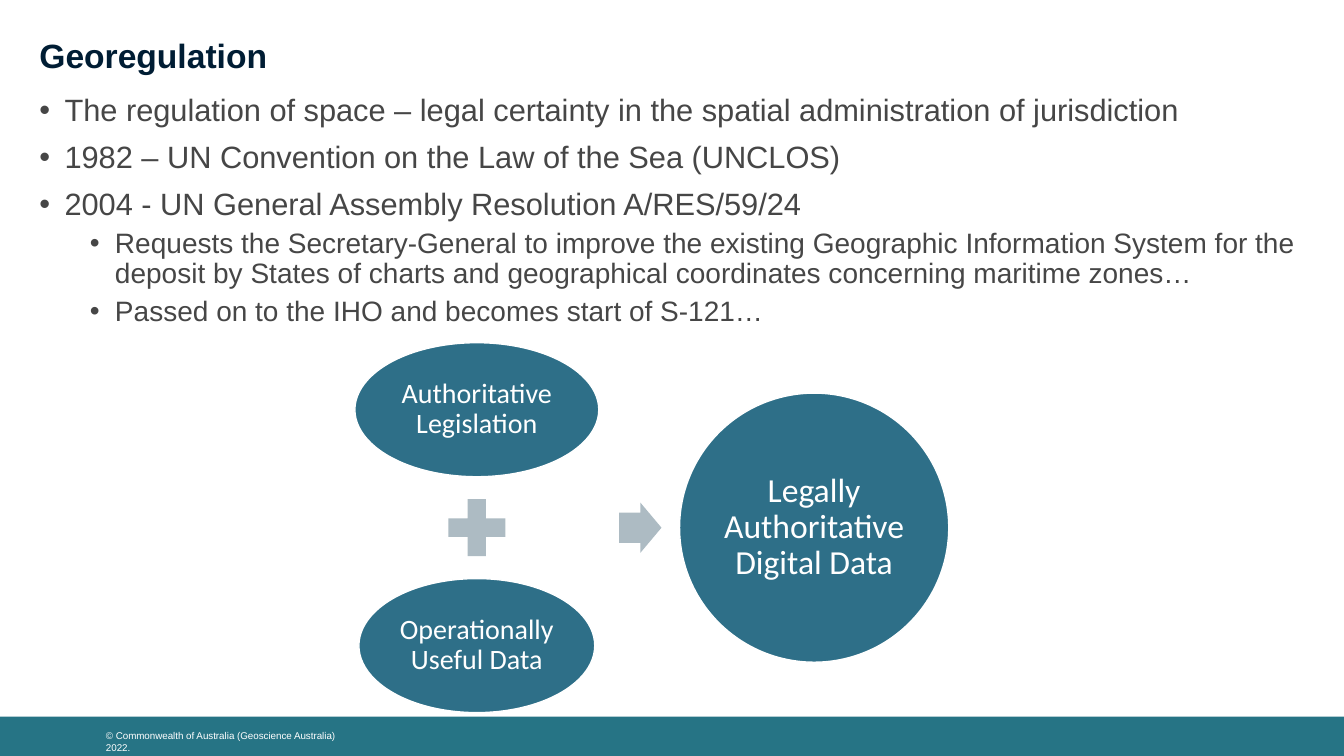
from lxml.etree import SubElement
from pptx import Presentation
from pptx.dml.color import RGBColor
from pptx.enum.shapes import MSO_SHAPE as Preset
from pptx.enum.text import MSO_ANCHOR as Anchor, MSO_AUTO_SIZE as AutoSize, PP_ALIGN as Align
from pptx.oxml.ns import qn
from pptx.util import Inches, Pt


def colour(hex_value):
    return RGBColor.from_string(hex_value)


class SlideBuilder:
    teal, steel, silver, white = "267485", "2E6F88", "ADBBC3", "FFFFFF"
    title_style = {"name": "Arial", "size": Pt(24), "bold": True}
    copyright_style = {"name": "Arial", "size": Pt(7)}
    levels = [
        {"size": 22, "before": 10, "indent": 0.25},
        {"size": 20, "before": 5, "indent": 0.75},
    ]

    def __init__(self, deck):
        self.width, self.height = deck.slide_width, deck.slide_height
        self.slide = deck.slides.add_slide(deck.slide_layouts[1])

    def box(self, left, top, width, height):
        return (
            round(self.width * left / 100),
            round(self.height * top / 100),
            round(self.width * width / 100),
            round(self.height * height / 100),
        )

    def place(self, holder, area):
        for side, length in zip(("left", "top", "width", "height"), self.box(*area)):
            setattr(holder, side, length)

    def frame(self, holder, anchor=Anchor.TOP, margin=0):
        frame = holder.text_frame
        values = {"word_wrap": True, "auto_size": AutoSize.NONE, "vertical_anchor": anchor}
        values.update({f"margin_{side}": Inches(margin) for side in ("left", "top", "right", "bottom")})
        for key, value in values.items():
            setattr(frame, key, value)
        return frame

    def add_words(self, paragraph, words, style, ink):
        run = paragraph.add_run()
        run.text = words
        for key, value in style.items():
            setattr(run.font, key, value)
        run.font.color.rgb = colour(ink)

    def title(self, words, area):
        heading = self.slide.shapes.title
        self.place(heading, area)
        paragraph = self.frame(heading, Anchor.MIDDLE).paragraphs[0]
        paragraph.alignment, paragraph.line_spacing = Align.LEFT, 0.9
        self.add_words(paragraph, words, self.title_style, "001D34")

    def bullets(self, points, area):
        body = self.slide.placeholders[1]
        self.place(body, area)
        frame = self.frame(body)
        for index, (level, words) in enumerate(points):
            look = self.levels[level]
            paragraph = frame.add_paragraph() if index else frame.paragraphs[0]
            properties = paragraph._p.get_or_add_pPr()
            properties.set("marL", str(Inches(look["indent"])))
            properties.set("indent", str(-Inches(0.25)))
            SubElement(properties, qn("a:buFont"), typeface="Arial")
            SubElement(properties, qn("a:buChar"), char="•")
            paragraph.level, paragraph.line_spacing = level, 0.9
            paragraph.space_before = Pt(look["before"] if index else 0)
            self.add_words(paragraph, words, {"name": "Arial", "size": Pt(look["size"])}, "464646")

    def shape(self, preset, area, fill):
        shape = self.slide.shapes.add_shape(preset, *self.box(*area))
        shape.shadow.inherit = False
        shape.fill.solid()
        shape.fill.fore_color.rgb = colour(fill)
        shape.line.fill.background()
        return shape

    def centred(self, preset, centre, size, fill):
        corner = [middle - length / 2 for middle, length in zip(centre, size)]
        return self.shape(preset, (*corner, *size), fill)

    def bubble(self, words, centre, size, points):
        bubble = self.centred(Preset.OVAL, centre, size, self.steel)
        bubble.line.color.rgb = colour(self.white)
        bubble.line.width = Pt(1)
        paragraph = self.frame(bubble, Anchor.MIDDLE, 0.03).paragraphs[0]
        paragraph.alignment, paragraph.line_spacing = Align.CENTER, 0.9
        self.add_words(paragraph, words, {"name": "Calibri", "size": Pt(points)}, self.white)

    def footer(self, words, area):
        self.shape(Preset.RECTANGLE, (0, 94.8, 100, 5.2), self.teal)
        notice = self.slide.shapes.add_textbox(*self.box(*area))
        self.add_words(self.frame(notice).paragraphs[0], words, self.copyright_style, self.white)


def main():
    deck = Presentation()
    deck.slide_width, deck.slide_height = Inches(13.33), Inches(7.5)
    page = SlideBuilder(deck)
    page.footer("© Commonwealth of Australia (Geoscience Australia) 2022.", (7.88, 96.53, 18.9, 1.6))
    page.title("Georegulation", (2.93, 5.2, 94.07, 4.8))
    page.bullets([
        (0, "The regulation of space – legal certainty in the spatial administration of jurisdiction"),
        (0, "1982 – UN Convention on the Law of the Sea (UNCLOS)"),
        (0, "2004 - UN General Assembly Resolution A/RES/59/24"),
        (1, "Requests the Secretary-General to improve the existing Geographic Information System "
            "for the deposit by States of charts and geographical coordinates concerning maritime zones…"),
        (1, "Passed on to the IHO and becomes start of S-121…"),
    ], (2.93, 12.53, 94.07, 75.47))

    inputs_x, axis_y, step = 35.48, 69.8, 15.6
    page.bubble("Authoritative Legislation", (inputs_x, axis_y - step), (18.15, 17.73), 20)
    page.centred(Preset.MATH_PLUS, (inputs_x, axis_y), (5.78, 10.27), page.silver)
    page.bubble("Operationally Useful Data", (inputs_x, axis_y + step), (17.55, 17.73), 20)
    arrow = page.centred(Preset.RIGHT_ARROW, (47.64, axis_y), (3.15, 6.67), page.silver)
    arrow.adjustments[0], arrow.adjustments[1] = 0.6, 0.5
    page.bubble("Legally Authoritative Digital Data", (60.58, axis_y), (20.03, 35.6), 24)
    deck.save("out.pptx")


if __name__ == "__main__":
    main()
